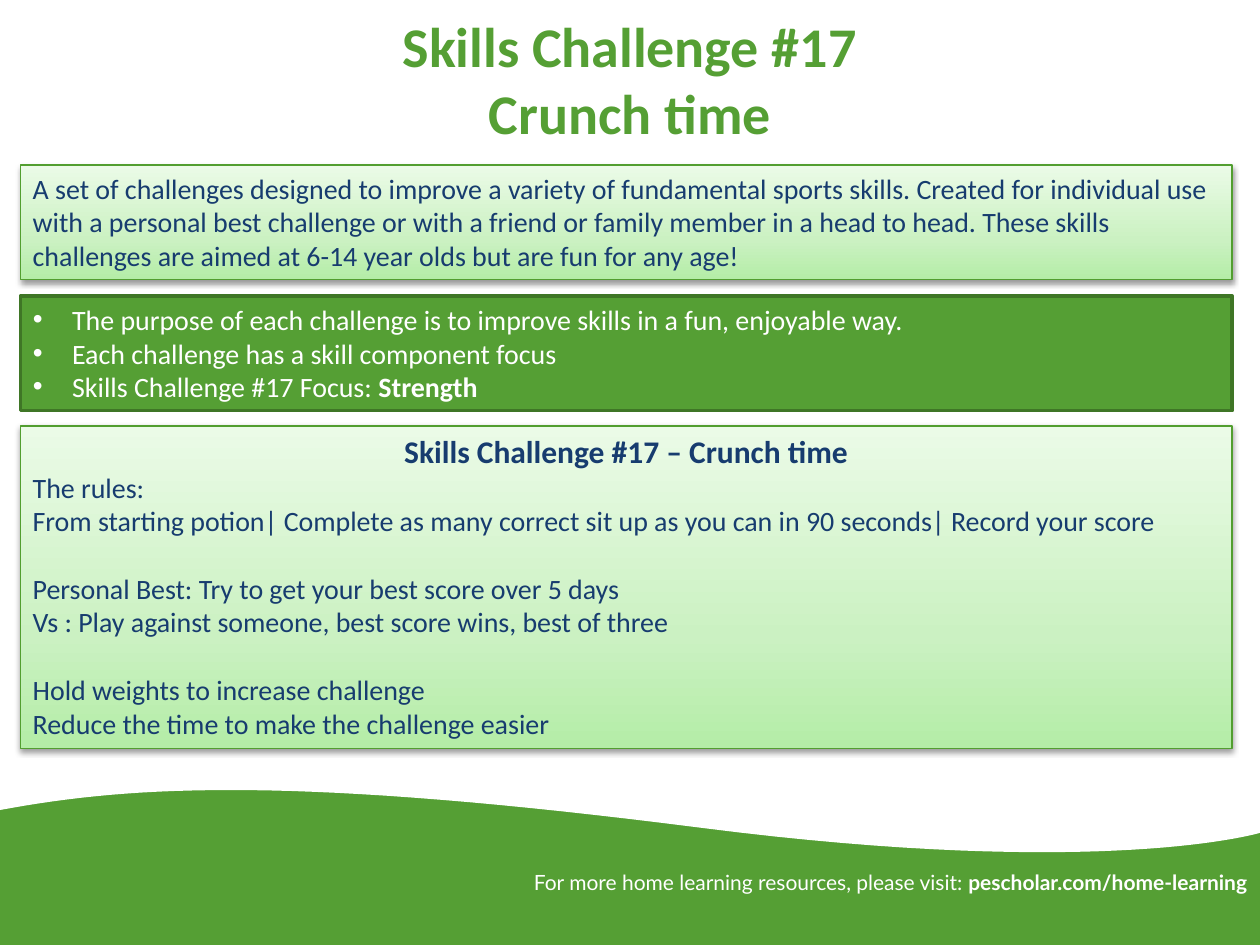
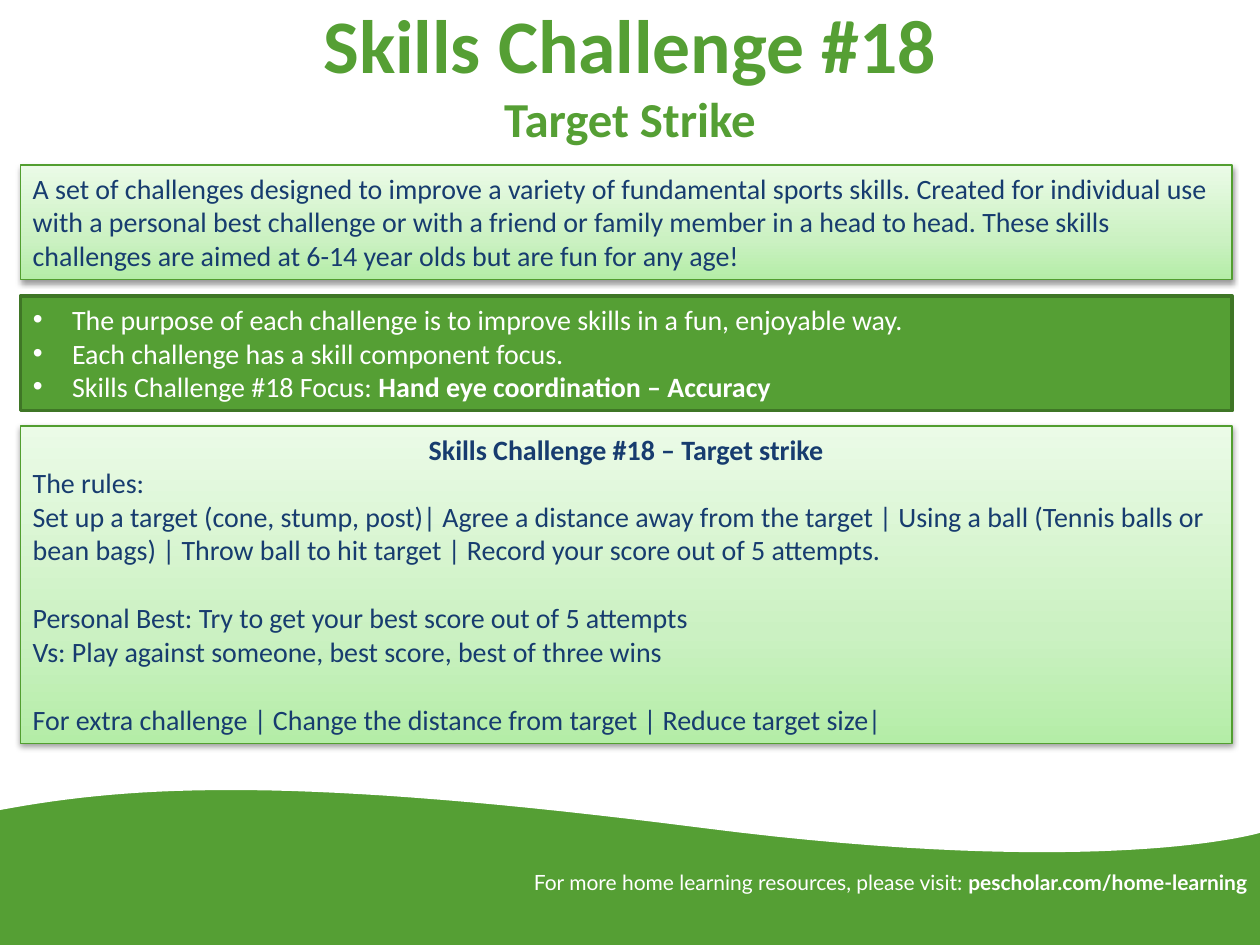
"""Build the two Skills Challenge slides."""
from dataclasses import dataclass

from pptx import Presentation
from pptx.dml.color import RGBColor
from pptx.enum.shapes import MSO_SHAPE
from pptx.enum.text import MSO_ANCHOR, MSO_AUTO_SIZE, PP_ALIGN
from pptx.oxml import parse_xml
from pptx.oxml.ns import nsdecls, qn
from pptx.util import Cm, Pt

GREEN, DARK_GREEN, EDGE_GREEN = "559F34", "3F7626", "529E30"
NAVY, WHITE = "173C6F", "FFFFFF"
GRADIENT = ((0, "B4EDA7"), (35, "CBF1C2"), (100, "EBFBE7"))
PAGE_WIDTH, PAGE_HEIGHT = 25.4, 19.05
PANEL_LEFT, PANEL_WIDTH, PANEL_HEIGHT = 0.41, 24.43, 2.31
INTRO_TOP, FOCUS_TOP, RULES_TOP = 3.33, 5.97, 8.59
WAVE_TOP, BAND_TOP = 15.19, 15.77
WAVE_CURVES = (
    ((0, 16.33), (2.72, 15.82), (6.02, 15.65), (14.15, 16.69)),
    ((14.15, 16.69), (22.28, 17.73), (25.4, 16.79), (25.4, 16.79)),
)
CURVE_STEPS = 32
BULLET_INDENT = Cm(0.79)
BLANK_LINE = 19.5

INTRO = (
    "A set of challenges designed to improve a variety of fundamental sports skills. "
    "Created for individual use with a personal best challenge or with a friend or "
    "family member in a head to head. These skills challenges are aimed at 6-14 year "
    "olds but are fun for any age!"
)


@dataclass(frozen=True)
class Line:
    """One paragraph, with an optional bold ending."""

    text: str
    strong: str = ""
    size: float = 16
    bold: bool = False
    align: PP_ALIGN = PP_ALIGN.LEFT
    gap: float = 0


@dataclass(frozen=True)
class Area:
    """A rectangle in centimetres."""

    left: float
    top: float
    width: float
    height: float

    def lengths(self) -> tuple:
        """Return left, top, width and height as lengths."""
        return Cm(self.left), Cm(self.top), Cm(self.width), Cm(self.height)


@dataclass(frozen=True)
class Challenge:
    """The content that changes from slide to slide."""

    title: tuple[Line, Line]
    title_top: float
    focus: tuple[Line, ...]
    rules: tuple[Line, ...]
    rules_height: float


def heading(text: str, size: float) -> Line:
    """Return a bold centred line."""
    return Line(text, size=size, bold=True, align=PP_ALIGN.CENTER)


CHALLENGES = (
    Challenge(
        title=(heading("Skills Challenge #17", 32), heading("Crunch time", 32)),
        title_top=0,
        focus=(
            Line("The purpose of each challenge is to improve skills in a fun, enjoyable way."),
            Line("Each challenge has a skill component focus"),
            Line("Skills Challenge #17 Focus: ", "Strength"),
        ),
        rules=(
            heading("Skills Challenge #17 – Crunch time", 18),
            Line("The rules:"),
            Line("From starting potion| Complete as many correct sit up as you can "
                 "in 90 seconds| Record your score"),
            Line("Personal Best: Try to get your best score over 5 days", gap=BLANK_LINE),
            Line("Vs : Play against someone, best score wins, best of three"),
            Line("Hold weights to increase challenge", gap=BLANK_LINE),
            Line("Reduce the time to make the challenge easier"),
        ),
        rules_height=6.5,
    ),
    Challenge(
        title=(heading("Skills Challenge #18", 43.2), heading("Target Strike", 27.9)),
        title_top=-0.13,
        focus=(
            Line("The purpose of each challenge is to improve skills in a fun, enjoyable way."),
            Line("Each challenge has a skill component focus."),
            Line("Skills Challenge #18 Focus: ", "Hand eye coordination – Accuracy"),
        ),
        rules=(
            heading("Skills Challenge #18 – Target strike", 16),
            Line("The rules:"),
            Line("Set up a target (cone, stump, post)| Agree a distance away from the target "
                 "| Using a ball (Tennis balls or bean bags) | Throw ball to hit target "
                 "| Record your score out of 5 attempts."),
            Line("Personal Best: Try to get your best score out of 5 attempts", gap=BLANK_LINE),
            Line("Vs: Play against someone, best score, best of three wins"),
            Line("For extra challenge | Change the distance from target | Reduce target size|",
                 gap=BLANK_LINE),
        ),
        rules_height=6.4,
    ),
)
FOOTER = Line("For more home learning resources, please visit: ",
              "pescholar.com/home-learning", size=12, align=PP_ALIGN.RIGHT)


def rgb(value: str) -> RGBColor:
    """Turn a hex string into a colour."""
    return RGBColor.from_string(value)


def write(box, lines: tuple[Line, ...], color: str, font: str = "Calibri",
          anchor: MSO_ANCHOR = MSO_ANCHOR.TOP) -> None:
    """Fill a box with formatted lines."""
    frame = box.text_frame
    frame.word_wrap = True
    frame.auto_size = MSO_AUTO_SIZE.NONE
    frame.vertical_anchor = anchor
    frame.text = "\n".join(line.text for line in lines)
    for para, line in zip(frame.paragraphs, lines):
        para.alignment = line.align
        para.space_before = Pt(line.gap)
        if line.strong:
            para.add_run().text = line.strong
        for index, span in enumerate(para.runs):
            span.font.size = Pt(line.size)
            span.font.name = font
            span.font.bold = line.bold or index > 0
            span.font.color.rgb = rgb(color)


def place(box, area: Area) -> None:
    """Move and size a placeholder."""
    box.left, box.top, box.width, box.height = area.lengths()


def paint(box, color: str) -> None:
    """Give a shape a plain fill without outline or shadow."""
    box.shadow.inherit = False
    box.fill.solid()
    box.fill.fore_color.rgb = rgb(color)
    box.line.fill.background()


def add_wave(page) -> None:
    """Draw the green band with its wavy upper edge."""
    band = Area(0, BAND_TOP, PAGE_WIDTH, PAGE_HEIGHT - BAND_TOP)
    paint(page.shapes.add_shape(MSO_SHAPE.RECTANGLE, *band.lengths()), GREEN)
    edge = []
    for curve in WAVE_CURVES:
        for step in range(CURVE_STEPS + 1):
            t = step / CURVE_STEPS
            weights = ((1 - t) ** 3, 3 * t * (1 - t) ** 2, 3 * t ** 2 * (1 - t), t ** 3)
            edge.append(tuple(
                Cm(sum(weight * point[axis] for weight, point in zip(weights, curve)))
                for axis in (0, 1)
            ))
    builder = page.shapes.build_freeform(0, Cm(WAVE_TOP))
    builder.add_line_segments(edge + [(Cm(PAGE_WIDTH), Cm(WAVE_TOP))], close=True)
    paint(builder.convert_to_shape(), WHITE)


def add_panel(page, area: Area, lines: tuple[Line, ...]) -> None:
    """Draw a pale green gradient panel with a soft shadow."""
    box = page.shapes.add_shape(MSO_SHAPE.RECTANGLE, *area.lengths())
    box.line.color.rgb = rgb(EDGE_GREEN)
    box.line.width = Pt(0.75)
    box.shadow.inherit = False
    box.fill.background()
    properties = box.element.spPr
    stops = "".join(
        f'<a:gs pos="{position * 1000}"><a:srgbClr val="{color}"/></a:gs>'
        for position, color in GRADIENT
    )
    properties.replace(properties.find(qn("a:noFill")), parse_xml(
        f'<a:gradFill {nsdecls("a")}><a:gsLst>{stops}</a:gsLst>'
        '<a:lin ang="16200000" scaled="0"/></a:gradFill>'
    ))
    properties.find(qn("a:effectLst")).append(parse_xml(
        f'<a:outerShdw {nsdecls("a")} blurRad="40000" dist="20000" dir="5400000" '
        'rotWithShape="0"><a:srgbClr val="000000"><a:alpha val="38000"/></a:srgbClr>'
        '</a:outerShdw>'
    ))
    write(box, lines, NAVY)


def fill_focus(box, lines: tuple[Line, ...]) -> None:
    """Turn the body placeholder into the green bullet panel."""
    place(box, Area(PANEL_LEFT, FOCUS_TOP, PANEL_WIDTH, PANEL_HEIGHT))
    box.fill.solid()
    box.fill.fore_color.rgb = rgb(GREEN)
    box.line.color.rgb = rgb(DARK_GREEN)
    box.line.width = Pt(2)
    write(box, lines, WHITE)
    for para in box.text_frame.paragraphs:
        properties = para._p.get_or_add_pPr()
        properties.set("marL", str(BULLET_INDENT))
        properties.set("indent", str(-BULLET_INDENT))
        properties.append(parse_xml(f'<a:buFont {nsdecls("a")} typeface="Arial"/>'))
        properties.append(parse_xml(f'<a:buChar {nsdecls("a")} char="•"/>'))


def add_challenge(deck, challenge: Challenge) -> None:
    """Add one challenge slide."""
    page = deck.slides.add_slide(deck.slide_layouts[1])
    add_wave(page)
    title = page.shapes.title
    place(title, Area(1.27, challenge.title_top, 22.86, 3.18))
    write(title, challenge.title, GREEN, anchor=MSO_ANCHOR.MIDDLE)
    add_panel(page, Area(PANEL_LEFT, INTRO_TOP, PANEL_WIDTH, PANEL_HEIGHT), (Line(INTRO),))
    fill_focus(page.placeholders[1], challenge.focus)
    add_panel(page, Area(PANEL_LEFT, RULES_TOP, PANEL_WIDTH, challenge.rules_height),
              challenge.rules)
    footer = page.shapes.add_textbox(*Area(8.61, 17.4, 16.79, 0.76).lengths())
    write(footer, (FOOTER,), WHITE, font="Lato")


def main() -> None:
    """Build and save the deck."""
    deck = Presentation()
    deck.slide_width, deck.slide_height = Cm(PAGE_WIDTH), Cm(PAGE_HEIGHT)
    for challenge in CHALLENGES:
        add_challenge(deck, challenge)
    deck.save("out.pptx")


if __name__ == "__main__":
    main()
